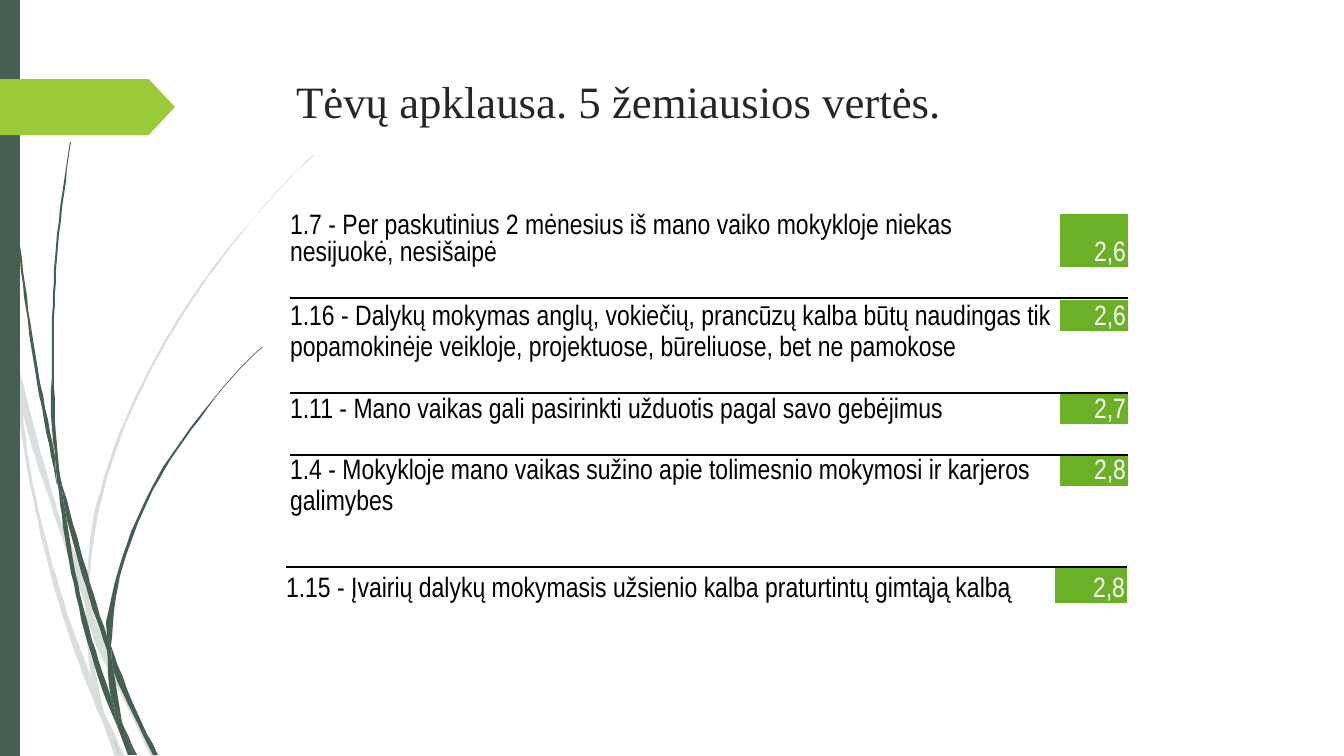
from math import hypot

from lxml import etree
from pptx import Presentation
from pptx.dml.color import RGBColor
from pptx.enum.shapes import MSO_SHAPE
from pptx.enum.text import MSO_ANCHOR, PP_ALIGN
from pptx.oxml.ns import qn
from pptx.util import Emu, Pt

PX = 12192000 / 1344
RECTANGLE, ARROW = MSO_SHAPE.RECTANGLE, MSO_SHAPE.PENTAGON
TOP, BOTTOM = MSO_ANCHOR.TOP, MSO_ANCHOR.BOTTOM
LEFT, RIGHT = PP_ALIGN.LEFT, PP_ALIGN.RIGHT
PLAIN_TABLE = "{2D5ABB26-0587-4C30-8999-92F81FD0307C}"
COLORS = {"forest": "455F51", "lime": "99CB38", "score": "6AB127",
          "title": "262626", "ink": "000000", "white": "FFFFFF"}
TITLE_FONT = {"name": "Times New Roman", "size": Pt(32), "bold": False}
TABLE_FONT = {"name": "Arial Narrow", "size": Pt(20), "bold": False}
NO_MARGINS = dict.fromkeys(("margin_left", "margin_right", "margin_top", "margin_bottom"), 0)

PALE_BLADES = [
    [(11, 353), (9, 325), (0, 284), (0, 301), (10, 347)],
    [(58, 526), (85, 604), (86, 591), (62, 524), (14, 348), (17, 379)],
    [(93, 612), (89, 601), (89, 615), (124, 700), (151, 757), (156, 757), (128, 698)],
    [(120, 757), (125, 757), (106, 717)],
    [(94, 688), (71, 624), (31, 473), (17, 379), (11, 353), (28, 474), (66, 626),
     (93, 699), (102, 720), (100, 713)],
    [(85, 604), (88, 651), (94, 688), (97, 698), (106, 717), (104, 712), (92, 651),
     (89, 615), (89, 613)],
    [(89, 589), (96, 526), (111, 466), (133, 408), (161, 352), (194, 298), (231, 247),
     (270, 200), (292, 176), (314, 155), (314, 154), (291, 176), (270, 199), (230, 246),
     (192, 297), (159, 351), (131, 406), (108, 465), (92, 526), (86, 589), (86, 591), (89, 601)],
    [(102, 720), (115, 757), (120, 757)],
    [(89, 613), (89, 615), (89, 601), (86, 591), (85, 604)],
    [(97, 698), (94, 688), (100, 713), (102, 720), (120, 757), (106, 717)],
]
DARK_BLADES = [
    [(7, 111), (17, 235), (33, 358), (56, 481), (57, 485), (55, 461), (55, 457), (36, 358),
     (19, 234), (8, 110), (5, 48), (4, 0), (3, 0), (4, 48)],
    [(89, 597), (107, 650), (107, 638), (107, 636), (94, 595), (60, 476), (65, 509)],
    [(114, 654), (111, 646), (112, 661), (133, 714), (153, 755), (158, 755), (137, 712)],
    [(111, 697), (99, 662), (73, 560), (65, 509), (57, 481), (69, 561), (94, 664),
     (112, 714), (118, 728), (117, 723)],
    [(60, 476), (58, 457), (54, 352), (58, 247), (64, 195), (71, 142), (70, 142),
     (62, 195), (56, 247), (52, 352), (55, 453)],
    [(134, 755), (137, 755), (123, 725)],
    [(57, 481), (65, 509), (60, 476), (55, 453), (55, 457)],
    [(112, 638), (116, 597), (126, 556), (159, 480), (207, 409), (233, 377), (247, 362),
     (263, 347), (262, 347), (247, 361), (233, 376), (206, 408), (157, 478), (123, 555),
     (112, 595), (107, 636), (111, 646)],
    [(118, 728), (128, 755), (132, 755)],
    [(107, 650), (111, 697), (117, 712), (123, 725), (122, 722), (112, 661), (110, 656)],
    [(107, 650), (110, 656), (112, 661), (111, 646), (107, 636), (107, 638)],
    [(117, 712), (111, 697), (117, 723), (118, 728), (131, 755), (134, 755), (123, 725)],
]

SPACER = ("", "", 31, False, None)
LOWEST_SCORES = [
    ("1.7 - Per paskutinius 2 mėnesius iš mano vaiko mokykloje niekas nesijuokė, nesišaipė",
     "2,6", 53, False, None),
    SPACER,
    ("1.16 - Dalykų mokymas anglų, vokiečių, prancūzų kalba būtų naudingas tik",
     "", 2, True, Pt(8.8)),
    ("", "2,6", 31, False, Pt(7.8)),
    ("popamokinėje veikloje, projektuose, būreliuose, bet ne pamokose", "", 31, False, None),
    SPACER,
    ("1.11 - Mano vaikas gali pasirinkti užduotis pagal savo gebėjimus",
     "2,7", 31, True, Pt(8.7)),
    SPACER,
    ("1.4 - Mokykloje mano vaikas sužino apie tolimesnio mokymosi ir karjeros",
     "2,8", 31, True, Pt(8.7)),
    ("galimybes", "", 31, False, None),
]
FIFTH_SCORE = [
    ("1.15 - Įvairių dalykų mokymasis užsienio kalba praturtintų gimtąją kalbą",
     "2,8", 36, True, None),
]


def px(*lengths):
    """Turn px lengths into EMU."""
    return [Emu(round(length * PX)) for length in lengths]


def apply(target, values):
    """Set each named attribute on the target."""
    for name, value in values.items():
        setattr(target, name, value)


def paint(shape, color, opacity=100):
    """Fill a shape with one colour, without outline or shadow."""
    shape.shadow.inherit = False
    shape.line.fill.background()
    shape.fill.solid()
    shape.fill.fore_color.rgb = RGBColor.from_string(COLORS[color])
    if opacity < 100:
        tint = shape._element.spPr.find(".//" + qn("a:srgbClr"))
        etree.SubElement(tint, qn("a:alpha"), val=str(opacity * 1000))


def smooth(outline):
    """Round the gentle bends of a closed outline and keep its sharp tips."""
    count = len(outline)
    chords = [complex(*outline[(i + 1) % count]) - complex(*outline[i]) for i in range(count)]
    points = []
    for i, chord in enumerate(chords):
        start, slopes = complex(*outline[i]), []
        for before, after in ((chords[i - 1], chord), (chord, chords[(i + 1) % count])):
            lengths = hypot(before.real, before.imag), hypot(after.real, after.imag)
            cosine = (before * after.conjugate()).real / (lengths[0] * lengths[1])
            bend = before / lengths[0] * lengths[1] + after / lengths[1] * lengths[0]
            gentle = min(lengths) > 8 and cosine > 0.85
            slopes.append(bend / abs(bend) * abs(chord) if gentle else chord)
        steps = max(1, round(abs(chord) / 12))
        for t in (step / steps for step in range(steps)):
            spot = (start + chord * (3 * t**2 - 2 * t**3)
                    + slopes[0] * (t**3 - 2 * t**2 + t) + slopes[1] * (t**3 - t**2))
            points.append((spot.real, spot.imag))
    return points


def add_blades(slide, left, top, blades, opacity):
    """Draw grass blades as filled outlines."""
    for outline in blades:
        points = [(left + x, top + y) for x, y in smooth(outline)]
        builder = slide.shapes.build_freeform(*points[0], scale=PX)
        builder.add_line_segments(points[1:], close=True)
        paint(builder.convert_to_shape(), "forest", opacity)


def add_decoration(slide, left, top, height):
    """Draw the grass, the side band and the arrow tab."""
    add_blades(slide, left, top, PALE_BLADES, 20)
    add_blades(slide, left, top, DARK_BLADES, 100)
    paint(slide.shapes.add_shape(RECTANGLE, *px(left, top, 20, height)), "forest")
    tab = slide.shapes.add_shape(ARROW, *px(left, top + 79, 175, 56))
    tab.adjustments[0] = 0.47
    paint(tab, "lime")


def add_title(slide, left, top, width, height):
    """Place and format the slide title."""
    title = slide.shapes.title
    apply(title, dict(zip(("left", "top", "width", "height"), px(left, top, width, height))))
    apply(title.text_frame, {"text": "Tėvų apklausa. 5 žemiausios vertės.",
                             "vertical_anchor": TOP, "word_wrap": True})
    heading = title.text_frame.paragraphs[0]
    heading.alignment = LEFT
    apply(heading.runs[0].font, TITLE_FONT)
    heading.runs[0].font.color.rgb = RGBColor.from_string(COLORS["title"])


def set_borders(cell, ruled_sides):
    """Draw the ruled sides of a cell and clear the others."""
    for position, side in enumerate(("lnL", "lnR", "lnT", "lnB")):
        border = etree.Element(qn("a:" + side), w=str(Pt(1)))
        if side in ruled_sides:
            ink = etree.SubElement(border, qn("a:solidFill"))
            etree.SubElement(ink, qn("a:srgbClr"), val=COLORS["ink"])
        else:
            etree.SubElement(border, qn("a:noFill"))
        cell._tc.get_or_add_tcPr().insert(position, border)


def fill_cell(cell, text, color, alignment, spacing):
    """Write one table cell on a clear background."""
    apply(cell, {**NO_MARGINS, "text": text, "vertical_anchor": BOTTOM})
    cell.fill.background()
    entry = cell.text_frame.paragraphs[0]
    apply(entry, {"alignment": alignment, "line_spacing": spacing})
    for run in entry.runs:
        apply(run.font, TABLE_FONT)
        run.font.color.rgb = RGBColor.from_string(COLORS[color])
    if not text:
        etree.SubElement(entry._p, qn("a:endParaRPr"), sz="100")


def add_scores(slide, left, top, columns, scores):
    """Build a table of statements with their scores."""
    height = sum(score[2] for score in scores)
    frame = slide.shapes.add_table(len(scores), len(columns),
                                   *px(left, top, sum(columns), height))
    table = frame.table
    apply(table, {"first_row": False, "horz_banding": False})
    table._tbl.tblPr.find(qn("a:tableStyleId")).text = PLAIN_TABLE
    for column, width in zip(table.columns, px(*columns)):
        column.width = width
    rules_below = [score[3] for score in scores[1:]] + [False]
    for row, score, ruled_below in zip(table.rows, scores, rules_below):
        statement, value, row_height, ruled, spacing = score
        row.height = px(row_height)[0]
        statement_cell, value_cell, *margin_cells = row.cells
        fill_cell(statement_cell, statement, "ink", LEFT, spacing)
        fill_cell(value_cell, value, "white", RIGHT, spacing)
        value_cell.margin_right = px(2)[0]
        for cell in margin_cells:
            fill_cell(cell, "", "ink", LEFT, None)
            set_borders(cell, ())
        if value:
            value_cell.fill.solid()
            value_cell.fill.fore_color.rgb = RGBColor.from_string(COLORS["score"])
        sides = ["lnT"] * ruled + ["lnB"] * ruled_below
        for cell in (statement_cell, value_cell):
            set_borders(cell, sides)
    return table


def main():
    """Build the survey slide and save it."""
    deck = Presentation()
    apply(deck, dict(zip(("slide_width", "slide_height"), px(1344, 756))))
    slide = deck.slides.add_slide(deck.slide_layouts[5])
    add_decoration(slide, 0, 0, 756)
    add_title(slide, 286, 69, 983, 141)
    lowest = add_scores(slide, 290, 214, (770, 68, 19), LOWEST_SCORES)
    lowest.cell(2, 0).merge(lowest.cell(3, 0))
    add_scores(slide, 286, 567, (769, 72), FIFTH_SCORE)
    deck.save("out.pptx")


if __name__ == "__main__":
    main()
